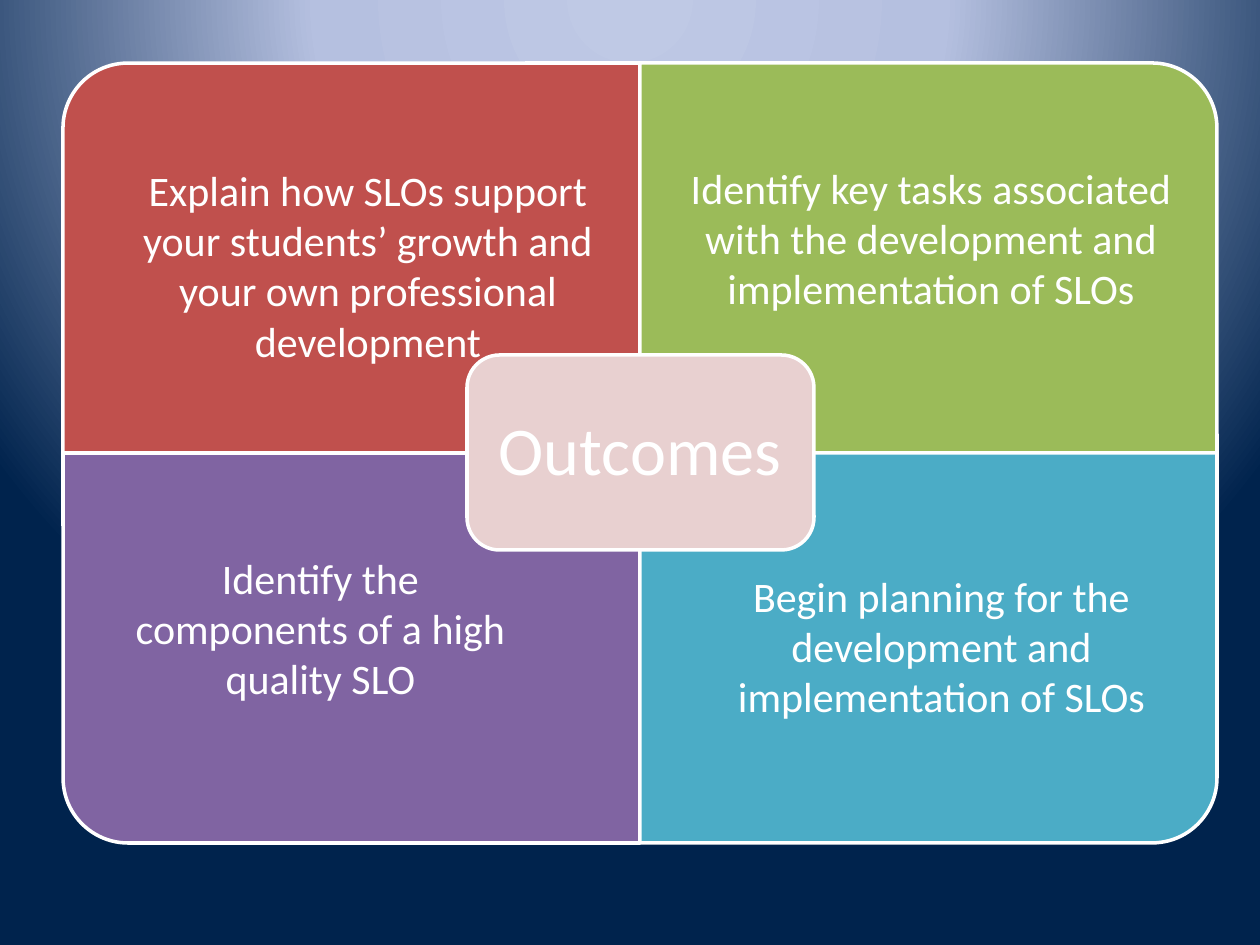
"""Build a slide with four outcome quadrants around a central label."""
from lxml import etree
from pptx import Presentation
from pptx.dml.color import RGBColor
from pptx.enum.shapes import MSO_SHAPE
from pptx.enum.text import MSO_ANCHOR, PP_ALIGN
from pptx.oxml import parse_xml
from pptx.oxml.ns import nsdecls, qn
from pptx.util import Pt

CENTER = PP_ALIGN.CENTER
TOP, MIDDLE = MSO_ANCHOR.TOP, MSO_ANCHOR.MIDDLE
QUADRANT, LABEL = MSO_SHAPE.ROUND_1_RECTANGLE, MSO_SHAPE.ROUNDED_RECTANGLE

PX = 914400 / 126
SLIDE_SIZE = (1260, 945)
GRID_LEFT, GRID_TOP = 63, 63
CELL_WIDTH, CELL_HEIGHT = 577, 390
FONT = "Calibri"

COLORS = {
    "red": "C0504D", "green": "9BBB59", "purple": "8064A2", "teal": "4BACC6",
    "pink": "E8D0D0", "white": "FFFFFF",
}
BACKGROUND = [(0, "BFC9E5"), (40, "B5C0E0"), (100, "00234D")]

QUADRANTS = [
    {"cell": (0, 0), "turn": 270, "color": "red", "text_at": (116, 158, 504, 267),
     "text": "Explain how SLOs support your students’ growth and your own professional development"},
    {"cell": (1, 0), "turn": 0, "color": "green", "text_at": (663, 156, 536, 217),
     "text": "Identify key tasks associated with the development and implementation of SLOs"},
    {"cell": (0, 1), "turn": 180, "color": "purple", "text_at": (105, 546, 431, 165),
     "text": "Identify the components of a high quality SLO"},
    {"cell": (1, 1), "turn": 90, "color": "teal", "text_at": (714, 564, 455, 165),
     "text": "Begin planning for the development and implementation of SLOs"},
]
OUTCOMES = {"at": (467, 355, 347, 195), "text_at": (476, 365, 328, 176), "text": "Outcomes"}


def emu(*lengths):
    return [round(length * PX) for length in lengths]


def rgb(name):
    return RGBColor.from_string(COLORS[name])


def set_background(page):
    page.background.fill.gradient()
    gradient = page.element.find(".//" + qn("a:gradFill"))
    stops = "".join(f'<a:gs pos="{at * 1000}"><a:srgbClr val="{color}"/></a:gs>'
                    for at, color in BACKGROUND)
    radial = parse_xml(
        f'<a:gradFill {nsdecls("a")} rotWithShape="1"><a:gsLst>{stops}</a:gsLst>'
        '<a:path path="circle"><a:fillToRect l="50000" t="-80000" r="50000" b="180000"/>'
        '</a:path></a:gradFill>')
    gradient.getparent().replace(gradient, radial)
    etree.cleanup_namespaces(radial)


def add_panel(page, kind, at, color, turn=0):
    left, top, width, height = at
    if turn % 180:
        left += (width - height) / 2
        top -= (width - height) / 2
        width, height = height, width
    panel = page.shapes.add_shape(kind, *emu(left, top, width, height))
    panel.rotation = turn
    panel.shadow.inherit = False
    panel.fill.solid()
    panel.fill.fore_color.rgb = rgb(color)
    panel.line.color.rgb = rgb("white")
    panel.line.width = Pt(2)


def add_text(page, at, text, size, anchor=TOP):
    box = page.shapes.add_textbox(*emu(*at))
    frame = box.text_frame
    frame.word_wrap = True
    frame.vertical_anchor = anchor
    para = frame.paragraphs[0]
    para.text = text
    para.alignment = CENTER
    para.font.name = FONT
    para.font.size = Pt(size)
    para.font.color.rgb = rgb("white")
    return frame


def main():
    deck = Presentation()
    deck.slide_width, deck.slide_height = emu(*SLIDE_SIZE)
    page = deck.slides.add_slide(deck.slide_layouts[6])
    set_background(page)

    for quadrant in QUADRANTS:
        column, row = quadrant["cell"]
        at = (GRID_LEFT + column * CELL_WIDTH, GRID_TOP + row * CELL_HEIGHT,
              CELL_WIDTH, CELL_HEIGHT)
        add_panel(page, QUADRANT, at, quadrant["color"], quadrant["turn"])

    add_panel(page, LABEL, OUTCOMES["at"], "pink")
    frame = add_text(page, OUTCOMES["text_at"], OUTCOMES["text"], 39, MIDDLE)
    frame.margin_left = frame.margin_right = frame.margin_top = frame.margin_bottom = emu(20)[0]
    frame.paragraphs[0].line_spacing = 0.9

    for quadrant in QUADRANTS:
        add_text(page, quadrant["text_at"], quadrant["text"], 24)

    deck.save("out.pptx")


if __name__ == "__main__":
    main()
